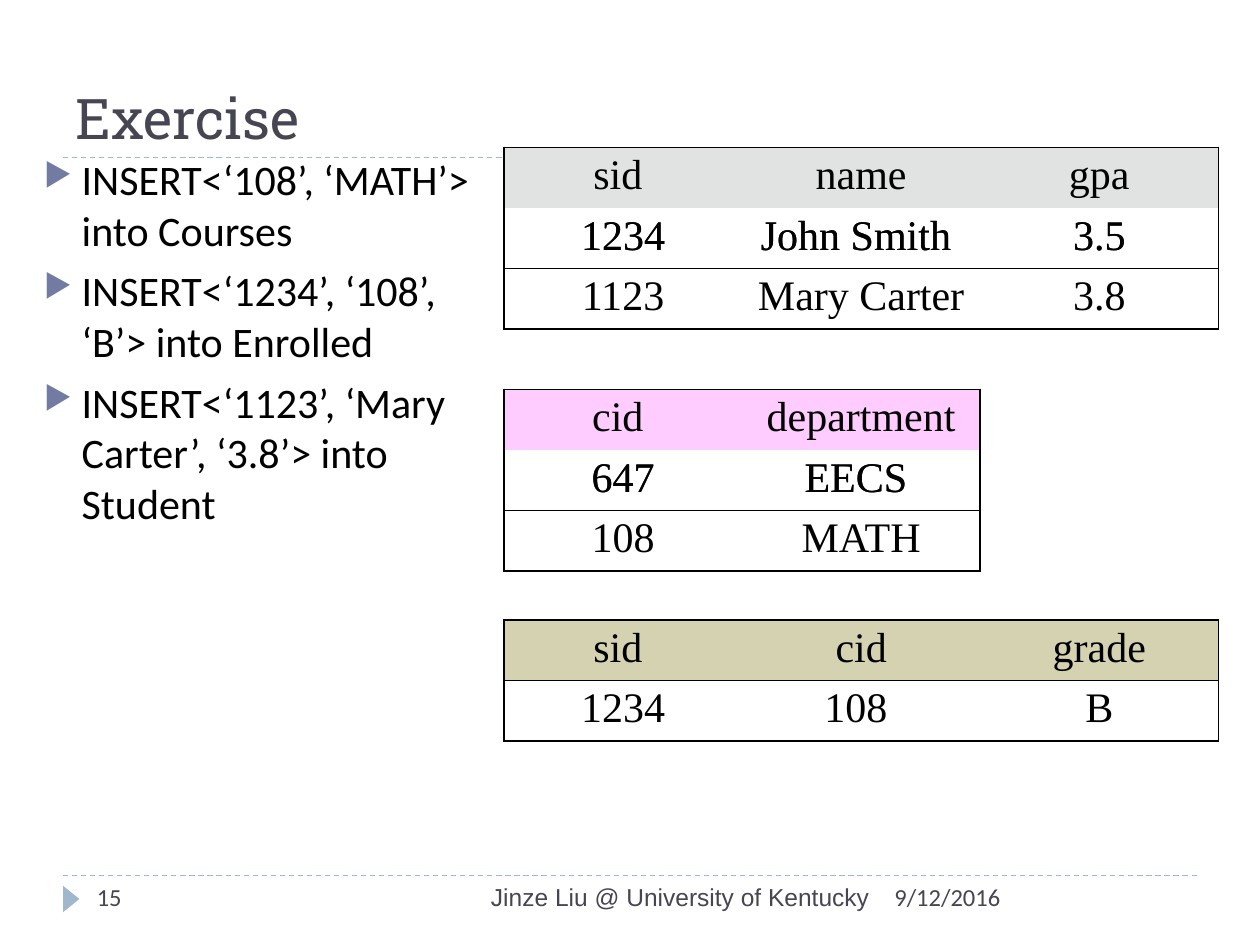
import pptx
import pptx.util
import pptx.dml.color
import pptx.enum.dml
import pptx.enum.shapes
import pptx.enum.text
import pptx.oxml
import pptx.oxml.ns
import lxml.etree

Inches = pptx.util.Inches
Pt = pptx.util.Pt
ALIGN = pptx.enum.text.PP_ALIGN
ANCHOR = pptx.enum.text.MSO_ANCHOR
NAMESPACE = pptx.oxml.ns.nsdecls("a")
NO_STYLE = "{2D5ABB26-0587-4C30-8999-92F81FD0307C}"

INK = "464653"
ACCENT = "9FB8CD"
COLUMN_WIDTH = 1.89
ROW_HEIGHT = 0.47

TITLE_FONT = {"name": "Roboto Slab", "size": Pt(32), "bold": False}
BODY_FONT = {"name": "Calibri", "size": Pt(24)}
CELL_FONT = {"name": "Times New Roman", "size": Pt(24)}
CELL_MARGINS = {"margin_top": Inches(0.04), "margin_bottom": Inches(0.04),
                "vertical_anchor": ANCHOR.TOP}

EXERCISES = [
    "INSERT<‘108’, ‘MATH’> into Courses",
    "INSERT<‘1234’, ‘108’, ‘B’> into Enrolled",
    "INSERT<‘1123’, ‘Mary Carter’, ‘3.8’> into Student",
]
FOOTERS = [
    ("9/12/2016", 7, 2.5, "Calibri", ALIGN.LEFT),
    ("Jinze Liu @ University of Kentucky", 3.17, 3.83, "Arial", ALIGN.RIGHT),
    ("15", 0.67, 2.17, "Calibri", ALIGN.LEFT),
]
STUDENT = {"top": 1.17, "color": "E1E3E3", "rows": [
    ["sid ", "name", "gpa"],
    ["1234", "John Smith ", "3.5"],
    ["1123", "Mary Carter ", "3.8"],
]}
COURSES = {"top": 3.09, "color": "FFCCFF", "rows": [
    ["cid ", "department"],
    ["647", "EECS "],
    ["108", "MATH"],
]}
ENROLLED = {"top": 4.92, "color": "D4D2B0", "rows": [
    ["sid ", "cid", "grade"],
    ["1234", "108 ", "B"],
]}
TABLE_STAGES = [(STUDENT, 2), (COURSES, 3), (ENROLLED, 2),
                (COURSES, 2), (ENROLLED, 1), (STUDENT, 3)]


def rgb(color):
    return pptx.dml.color.RGBColor.from_string(color)


def apply_format(target, values):
    for name, value in values.items():
        setattr(target, name, value)


def write_text(para, text, font, color, align=ALIGN.LEFT):
    span = para.add_run()
    span.text = text
    apply_format(span.font, font)
    span.font.color.rgb = rgb(color)
    para.alignment = align


def place_title(page, left, top, width, height):
    title = page.shapes.title
    apply_format(title, {"left": Inches(left), "top": Inches(top),
                         "width": Inches(width), "height": Inches(height)})
    apply_format(title.text_frame, {"vertical_anchor": ANCHOR.BOTTOM, "word_wrap": True})
    write_text(title.text_frame.paragraphs[0], "Exercise", TITLE_FONT, INK)


def place_rule(page, left, top, width):
    rule = page.shapes.add_connector(
        pptx.enum.shapes.MSO_CONNECTOR.STRAIGHT,
        Inches(left), Inches(top), Inches(left + width), Inches(top))
    apply_format(rule.line, {"width": Pt(0.75),
                             "dash_style": pptx.enum.dml.MSO_LINE.DASH})
    rule.line.color.rgb = rgb(ACCENT)
    lxml.etree.SubElement(rule._element.spPr, pptx.oxml.ns.qn("a:effectLst"))


def place_footer(page, top, height):
    marker = page.shapes.add_shape(
        pptx.enum.shapes.MSO_SHAPE.ISOSCELES_TRIANGLE,
        Inches(0.46), Inches(top + 0.12), Inches(0.21), Inches(0.13))
    marker.rotation = 90
    marker.shadow.inherit = False
    marker.fill.solid()
    marker.fill.fore_color.rgb = rgb(ACCENT)
    marker.line.fill.background()
    for text, left, width, font_name, align in FOOTERS:
        box = page.shapes.add_textbox(Inches(left), Inches(top), Inches(width), Inches(height))
        box.text_frame.word_wrap = True
        write_text(box.text_frame.paragraphs[0], text,
                   {"name": font_name, "size": Pt(14)}, INK, align)


def add_bullet(para):
    properties = para._p.get_or_add_pPr()
    properties.set("marL", str(Inches(0.3)))
    properties.set("indent", str(Inches(-0.3)))
    for markup in ('<a:buClr {}><a:srgbClr val="727CA3"/></a:buClr>',
                   '<a:buSzPct {} val="76000"/>',
                   '<a:buChar {} char="▶"/>'):
        properties.append(pptx.oxml.parse_xml(markup.format(NAMESPACE)))


def place_exercises(page, left, top, width, height):
    box = page.shapes.add_textbox(Inches(left), Inches(top), Inches(width), Inches(height))
    frame = box.text_frame
    frame.word_wrap = True
    for index, text in enumerate(EXERCISES):
        para = frame.add_paragraph() if index else frame.paragraphs[0]
        write_text(para, text, BODY_FONT, "000000")
        para.space_before = Pt(6)
        add_bullet(para)


def set_borders(cell, sides):
    properties = cell._tc.get_or_add_tcPr()
    for side, drawn in sides.items():
        paint = '<a:solidFill><a:srgbClr val="000000"/></a:solidFill>' if drawn else "<a:noFill/>"
        properties.append(pptx.oxml.parse_xml(
            f'<a:ln{side} {NAMESPACE} w="{Pt(1)}">{paint}</a:ln{side}>'))


def place_relation(page, relation, row_count, left):
    rows = relation["rows"][:row_count]
    column_count = len(rows[0])
    table = page.shapes.add_table(
        row_count, column_count, Inches(left), Inches(relation["top"]),
        Inches(COLUMN_WIDTH * column_count), Inches(ROW_HEIGHT * row_count)).table
    apply_format(table, {"first_row": False, "horz_banding": False})
    table._tbl.tblPr.find(pptx.oxml.ns.qn("a:tableStyleId")).text = NO_STYLE
    for row_index, row in enumerate(rows):
        for column_index, text in enumerate(row):
            cell = table.cell(row_index, column_index)
            apply_format(cell, CELL_MARGINS)
            set_borders(cell, {"L": column_index == 0,
                               "R": column_index == column_count - 1,
                               "T": row_index == 0,
                               "B": row_index == row_count - 1})
            if row_index == 0:
                cell.fill.solid()
                cell.fill.fore_color.rgb = rgb(relation["color"])
            else:
                cell.fill.background()
            write_text(cell.text_frame.paragraphs[0], text, CELL_FONT, "000000", ALIGN.CENTER)


def main():
    deck = pptx.Presentation()
    apply_format(deck, {"slide_width": Inches(10), "slide_height": Inches(7.5)})
    page = deck.slides.add_slide(deck.slide_layouts[5])
    for top in (6.95, 1.25):
        place_rule(page, 0.5, top, 9)
    place_title(page, 0.5, 0.17, 9, 1.08)
    place_footer(page, 6.95, 0.4)
    place_exercises(page, 0.25, 1.17, 3.67, 5.75)
    for relation, row_count in TABLE_STAGES:
        place_relation(page, relation, row_count, 4)
    deck.save("out.pptx")


if __name__ == "__main__":
    main()
